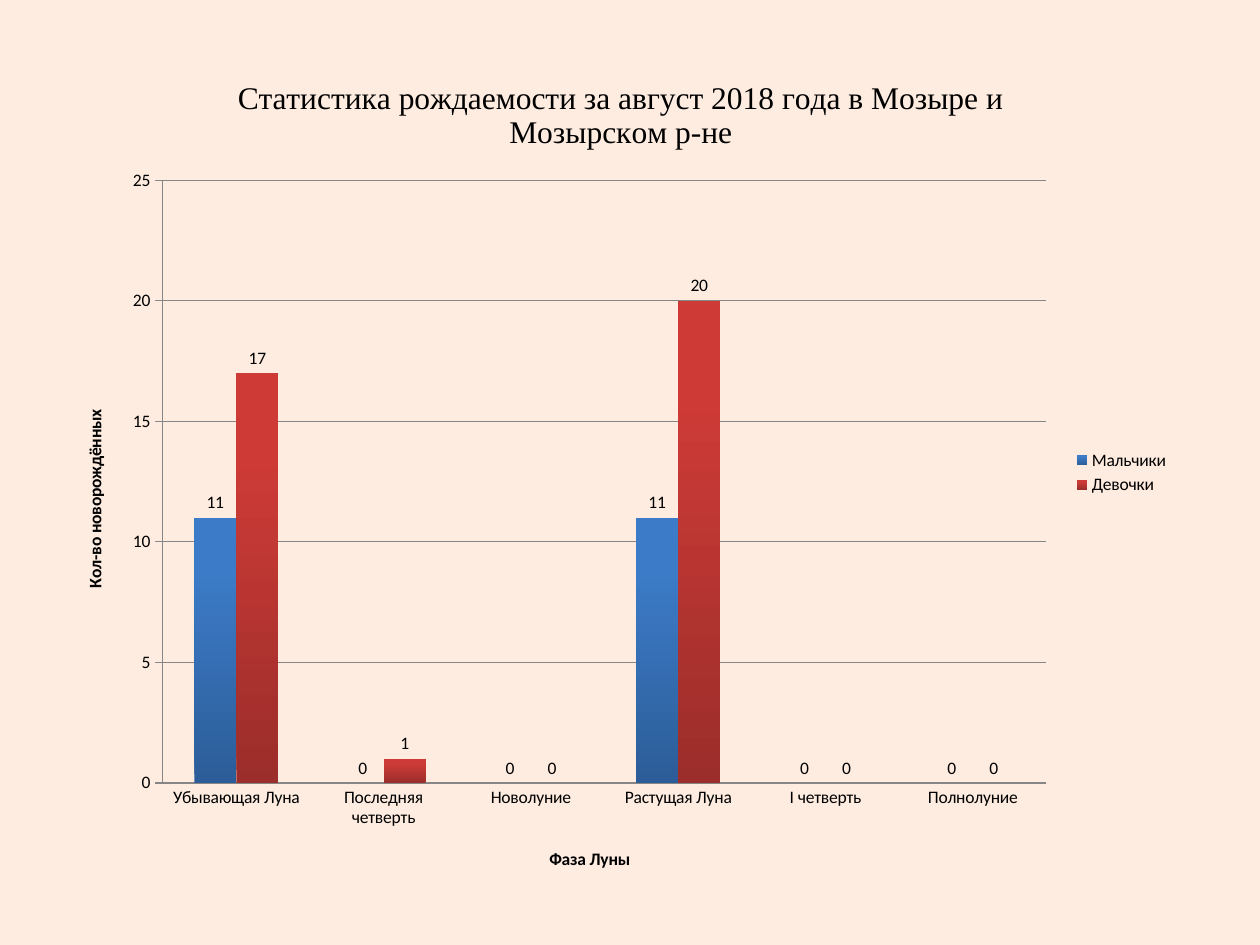
from lxml.etree import SubElement
from pptx import Presentation
from pptx.chart.data import CategoryChartData
from pptx.dml.color import RGBColor
from pptx.enum.chart import XL_CHART_TYPE, XL_LABEL_POSITION, XL_LEGEND_POSITION, XL_TICK_MARK
from pptx.oxml.ns import qn
from pptx.util import Pt

COLORS = {
    "background": "FEECE0",
    "text": "000000",
    "line": "868686",
    "boys_dark": "2C5D98",
    "boys_light": "3C7BC7",
    "girls_dark": "9B2D2A",
    "girls_light": "CE3B37",
}
CHART_FRAME = (34, 28, 641.5, 484)
PLOT_FRAME = (93, 103, 505, 344.5)
PHASES = ["Убывающая Луна", "Последняя четверть", "Новолуние",
          "Растущая Луна", "I четверть", "Полнолуние"]
BIRTHS = {
    "Мальчики": ([11, 0, 0, 11, 0, 0], "boys"),
    "Девочки": ([17, 1, 0, 20, 0, 0], "girls"),
}


class SlideBuilder:
    def __init__(self, presentation):
        self.font = "Calibri"
        self.title_font = "Times New Roman"
        self.slide = presentation.slides.add_slide(presentation.slide_layouts[6])

    def color(self, name):
        return RGBColor.from_string(COLORS[name])

    def background(self, name):
        fill = self.slide.background.fill
        fill.solid()
        fill.fore_color.rgb = self.color(name)

    def style_font(self, font, name, size, bold=False):
        font.name = name
        font.size = Pt(size)
        font.bold = bold
        font.color.rgb = self.color("text")

    def style_line(self, line):
        line.width = Pt(0.75)
        line.color.rgb = self.color("line")

    def title(self, owner, text, name, size, bold):
        text_frame = owner.text_frame
        text_frame.text = text
        self.style_font(text_frame.paragraphs[0].runs[0].font, name, size, bold)

    def axis(self, axis, text, tick_mark, gridlines):
        self.title(axis.axis_title, text, self.font, 10, True)
        axis.major_tick_mark = tick_mark
        axis.minor_tick_mark = XL_TICK_MARK.NONE
        axis.has_major_gridlines = gridlines
        if gridlines:
            self.style_line(axis.major_gridlines.format.line)
        self.style_line(axis.format.line)

    def series(self, series, shade):
        fill = series.format.fill
        fill.gradient()
        fill.gradient_angle = 90
        for stop, tone, position in zip(fill.gradient_stops, ("dark", "light"), (0, 0.8)):
            stop.color.rgb = self.color(f"{shade}_{tone}")
            stop.position = position
        series.invert_if_negative = False
        labels = series.data_labels
        labels.show_value = True
        labels.position = XL_LABEL_POSITION.OUTSIDE_END
        self.style_font(labels.font, self.font, 10)

    def plot_layout(self, chart, chart_frame, plot_frame):
        left, top, width, height = chart_frame
        plot_left, plot_top, plot_width, plot_height = plot_frame
        plot_area = chart.plots[0]._element.getparent()
        layout = plot_area.find(qn("c:layout"))
        if layout is None:
            layout = SubElement(plot_area, qn("c:layout"))
            plot_area.insert(0, layout)
        manual = SubElement(layout, qn("c:manualLayout"))
        values = {
            "layoutTarget": "inner", "xMode": "edge", "yMode": "edge",
            "x": (plot_left - left) / width, "y": (plot_top - top) / height,
            "w": plot_width / width, "h": plot_height / height,
        }
        for tag, value in values.items():
            SubElement(manual, qn(f"c:{tag}")).set("val", str(value))

    def column_chart(self, frame, plot_frame, categories, groups, titles):
        data = CategoryChartData()
        data.categories = categories
        for name, (values, _) in groups.items():
            data.add_series(name, values)
        chart = self.slide.shapes.add_chart(
            XL_CHART_TYPE.COLUMN_CLUSTERED, *map(Pt, frame), data).chart
        self.style_font(chart.font, self.font, 10)
        chart.has_title = True
        heading, category_title, value_title = titles
        self.title(chart.chart_title, heading, self.title_font, 18, False)
        chart.chart_title.include_in_layout = False
        chart.has_legend = True
        chart.legend.position = XL_LEGEND_POSITION.RIGHT
        chart.legend.include_in_layout = False
        self.style_font(chart.legend.font, self.font, 10)
        self.axis(chart.category_axis, category_title, XL_TICK_MARK.NONE, False)
        self.axis(chart.value_axis, value_title, XL_TICK_MARK.CROSS, True)
        chart.value_axis.minimum_scale = 0
        chart.value_axis.maximum_scale = 25
        chart.value_axis.major_unit = 5
        plot = chart.plots[0]
        plot.gap_width = 150
        plot.overlap = 0
        plot.vary_by_categories = False
        for series, (_, shade) in zip(plot.series, groups.values()):
            self.series(series, shade)
        self.plot_layout(chart, frame, plot_frame)


def main():
    presentation = Presentation()
    presentation.slide_width = Pt(720)
    presentation.slide_height = Pt(540)
    builder = SlideBuilder(presentation)
    builder.background("background")
    builder.column_chart(
        CHART_FRAME, PLOT_FRAME, PHASES, BIRTHS,
        ("Статистика рождаемости за август 2018 года в Мозыре и Мозырском р-не",
         "Фаза Луны", "Кол-во новорождённых"))
    presentation.save("out.pptx")


if __name__ == "__main__":
    main()
